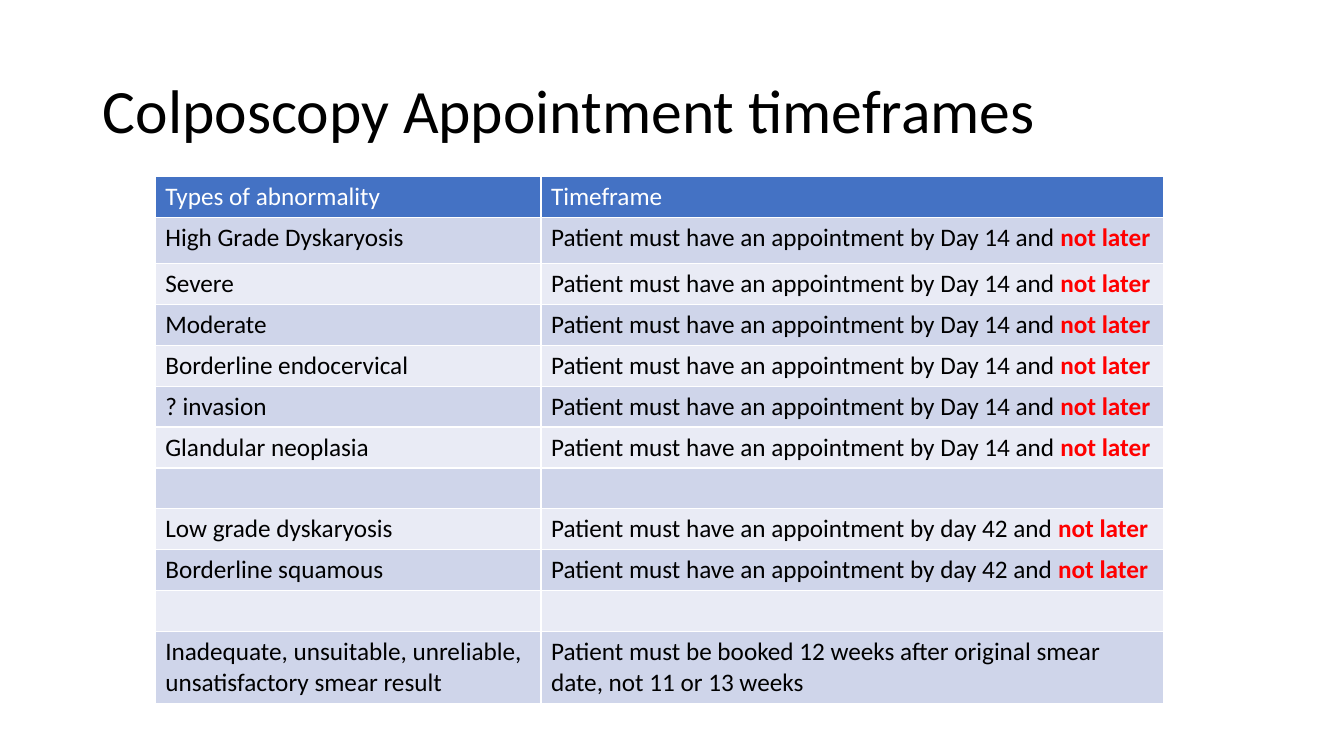
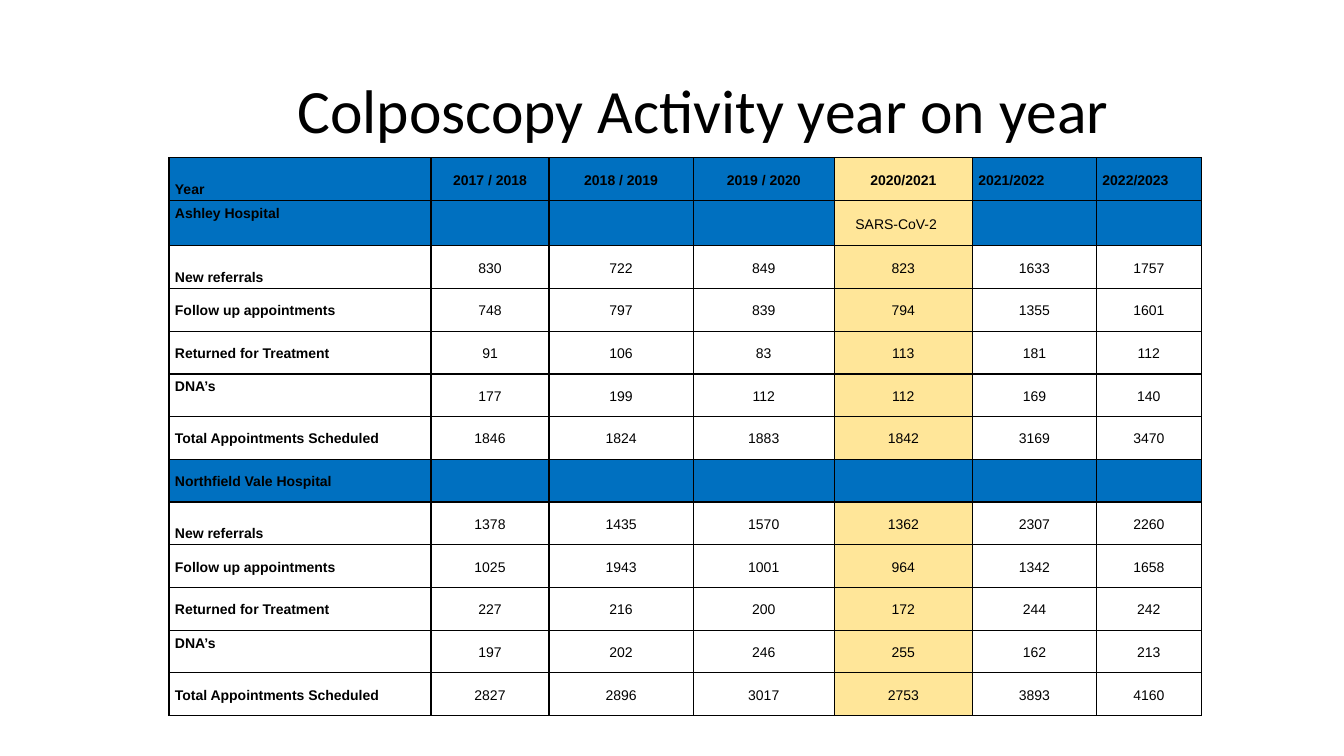
from dataclasses import dataclass

from lxml.etree import SubElement
from pptx import Presentation
from pptx.dml.color import RGBColor
from pptx.enum.text import MSO_ANCHOR as Anchor, MSO_AUTO_SIZE as AutoSize, PP_ALIGN as Align
from pptx.oxml.ns import qn
from pptx.presentation import Presentation as Deck
from pptx.slide import Slide
from pptx.table import _Cell as TableCell
from pptx.util import Inches, Length, Pt

SLIDE_W, SLIDE_H = Inches(13.33), Inches(7.5)
COLORS = {
    "black": "000000", "white": "FFFFFF", "alert": "FF0000",
    "header": "4472C4", "band_dark": "CFD5EA", "band_light": "E9EBF5",
    "hospital": "0070C0", "pandemic": "FFE699",
}


@dataclass(frozen=True)
class Cell:
    text: str = ""
    fill: str = "white"
    color: str = "black"
    alert: str = ""
    bold: bool = False
    align: Align = Align.LEFT
    anchor: Anchor = Anchor.MIDDLE
    indent: float = 0


@dataclass(frozen=True)
class Grid:
    """Place, columns and rows in percent of the slide; insets in inches."""
    left: float
    top: float
    columns: list[float]
    rows: list[float]
    font: str
    size: int
    line_spacing: float
    border: str
    inset_x: float
    inset_y: float


@dataclass(frozen=True)
class Deadline:
    timeframe: str
    alert: str
    abnormalities: list[str]


@dataclass(frozen=True)
class Hospital:
    name: str
    anchor: Anchor
    activity: list[list[int]]


DEADLINES = [
    Deadline("Patient must have an appointment by Day 14 and ", "not later",
             ["High Grade Dyskaryosis", "Severe", "Moderate", "Borderline endocervical",
              "? invasion", "Glandular neoplasia"]),
    Deadline("", "", [""]),
    Deadline("Patient must have an appointment by day 42 and ", "not later",
             ["Low grade dyskaryosis", "Borderline squamous"]),
    Deadline("", "", [""]),
    Deadline("Patient must be booked 12 weeks after original smear date, not 11 or 13 weeks", "",
             ["Inadequate, unsuitable, unreliable, unsatisfactory smear result"]),
]
TIMEFRAME_GRID = Grid(
    left=11.55, top=23.33, columns=[28.7, 46.36], rows=[5.4, 6.13] + [5.4] * 9 + [9.6],
    font="Calibri", size=18, line_spacing=1.0, border="white", inset_x=0.1, inset_y=0.05)

YEARS = ["2017 / 2018", "2018 / 2019", "2019 / 2020", "2020/2021", "2021/2022", "2022/2023"]
PANDEMIC = YEARS.index("2020/2021")
MEASURES = {
    "New referrals": Anchor.BOTTOM,
    "Follow up appointments": Anchor.MIDDLE,
    "Returned for Treatment": Anchor.MIDDLE,
    "DNA’s": Anchor.TOP,
    "Total Appointments Scheduled": Anchor.MIDDLE,
}
FIRST_HOSPITAL = Hospital("Ashley Hospital", Anchor.TOP, [
    [830, 722, 849, 823, 1633, 1757],
    [748, 797, 839, 794, 1355, 1601],
    [91, 106, 83, 113, 181, 112],
    [177, 199, 112, 112, 169, 140],
    [1846, 1824, 1883, 1842, 3169, 3470],
])
SECOND_HOSPITAL = Hospital("Northfield Vale Hospital", Anchor.MIDDLE, [
    [1378, 1435, 1570, 1362, 2307, 2260],
    [1025, 1943, 1001, 964, 1342, 1658],
    [227, 216, 200, 172, 244, 242],
    [197, 202, 246, 255, 162, 213],
    [2827, 2896, 3017, 2753, 3893, 4160],
])
ACTIVITY_GRID = Grid(
    left=12.57, top=20.87, columns=[19.5, 8.78, 10.73, 10.5, 10.28, 9.23, 7.8],
    rows=[5.65, 6] + [5.65] * 11, font="Arial", size=10, line_spacing=1.15,
    border="black", inset_x=0.06, inset_y=0.03)


def across(percent: float) -> Length:
    return Length(round(SLIDE_W * percent / 100))


def down(percent: float) -> Length:
    return Length(round(SLIDE_H * percent / 100))


def rgb(name: str) -> RGBColor:
    return RGBColor.from_string(COLORS[name])


def add_titled_slide(deck: Deck, title: str, indent: float = 0.1) -> Slide:
    slide = deck.slides.add_slide(deck.slide_layouts[5])
    heading = slide.shapes.title
    heading.left, heading.top = across(6.9), down(5.33)
    heading.width, heading.height = across(86.25), down(19.33)
    frame = heading.text_frame
    frame.text = title
    frame.auto_size = AutoSize.NONE
    frame.vertical_anchor = Anchor.MIDDLE
    frame.margin_left = Inches(indent)
    paragraph = frame.paragraphs[0]
    paragraph.alignment = Align.LEFT
    paragraph.line_spacing = 0.9
    paragraph.font.name, paragraph.font.size = "Calibri", Pt(44)
    paragraph.font.color.rgb = rgb("black")
    return slide


def set_borders(cell: TableCell, color: str) -> None:
    """Draw all four sides; they must come before the fill in the XML."""
    properties = cell._tc.get_or_add_tcPr()
    for position, side in enumerate(("lnL", "lnR", "lnT", "lnB")):
        line = SubElement(properties, qn(f"a:{side}"), w=str(Pt(1)))
        fill = SubElement(line, qn("a:solidFill"))
        SubElement(fill, qn("a:srgbClr"), val=COLORS[color])
        properties.insert(position, line)


def fill_cell(cell: TableCell, content: Cell, grid: Grid) -> None:
    cell.fill.solid()
    cell.fill.fore_color.rgb = rgb(content.fill)
    set_borders(cell, grid.border)
    cell.margin_left = Inches(grid.inset_x + content.indent)
    cell.margin_right = Inches(grid.inset_x)
    cell.margin_top = cell.margin_bottom = Inches(grid.inset_y)
    cell.vertical_anchor = content.anchor
    paragraph = cell.text_frame.paragraphs[0]
    paragraph.alignment = content.align
    paragraph.line_spacing = grid.line_spacing
    font = paragraph.font
    font.name, font.size, font.bold = grid.font, Pt(grid.size), content.bold
    font.color.rgb = rgb(content.color)
    if content.text:
        paragraph.add_run().text = content.text
    if content.alert:
        warning = paragraph.add_run()
        warning.text = content.alert
        warning.font.bold = True
        warning.font.color.rgb = rgb("alert")


def add_grid(slide: Slide, grid: Grid, contents: list[list[Cell]]) -> None:
    table = slide.shapes.add_table(
        len(grid.rows), len(grid.columns), across(grid.left), down(grid.top),
        across(sum(grid.columns)), down(sum(grid.rows))).table
    table.first_row = table.horz_banding = False
    for column, width in zip(table.columns, grid.columns):
        column.width = across(width)
    for row, height, row_contents in zip(table.rows, grid.rows, contents):
        row.height = down(height)
        for cell, content in zip(row.cells, row_contents):
            fill_cell(cell, content, grid)


def timeframe_rows() -> list[list[Cell]]:
    rows = [[Cell(label, "header", "white", anchor=Anchor.TOP)
             for label in ("Types of abnormality", "Timeframe")]]
    for deadline in DEADLINES:
        for abnormality in deadline.abnormalities:
            band = "band_dark" if len(rows) % 2 else "band_light"
            rows.append([
                Cell(abnormality, band, anchor=Anchor.TOP),
                Cell(deadline.timeframe, band, alert=deadline.alert, anchor=Anchor.TOP)])
    return rows


def year_fill(index: int, usual: str) -> str:
    return "pandemic" if index == PANDEMIC else usual


def year_row() -> list[Cell]:
    label = Cell("Year", "hospital", bold=True, anchor=Anchor.BOTTOM)
    return [label] + [
        Cell(year, year_fill(index, "hospital"), bold=True,
             align=Align.CENTER if index <= PANDEMIC else Align.LEFT)
        for index, year in enumerate(YEARS)]


def hospital_rows(hospital: Hospital) -> list[list[Cell]]:
    """A band with the hospital's name, then one row for each measure."""
    name = Cell(hospital.name, "hospital", bold=True, anchor=hospital.anchor)
    rows = [[name] + [Cell(fill="hospital") for _ in YEARS]]
    for (measure, anchor), counts in zip(MEASURES.items(), hospital.activity):
        rows.append([Cell(measure, bold=True, anchor=anchor)] + [
            Cell(str(count), year_fill(index, "white"), align=Align.CENTER)
            for index, count in enumerate(counts)])
    return rows


def activity_rows() -> list[list[Cell]]:
    first_rows = hospital_rows(FIRST_HOSPITAL)
    first_rows[0][PANDEMIC + 1] = Cell("SARS-CoV-2", "pandemic", indent=0.15)
    return [year_row(), *first_rows, *hospital_rows(SECOND_HOSPITAL)]


def main() -> None:
    deck = Presentation()
    deck.slide_width, deck.slide_height = SLIDE_W, SLIDE_H
    timeframes = add_titled_slide(deck, "Colposcopy Appointment timeframes")
    add_grid(timeframes, TIMEFRAME_GRID, timeframe_rows())
    activity = add_titled_slide(deck, "Colposcopy Activity year on year", indent=2.03)
    add_grid(activity, ACTIVITY_GRID, activity_rows())
    deck.save("out.pptx")


if __name__ == "__main__":
    main()
